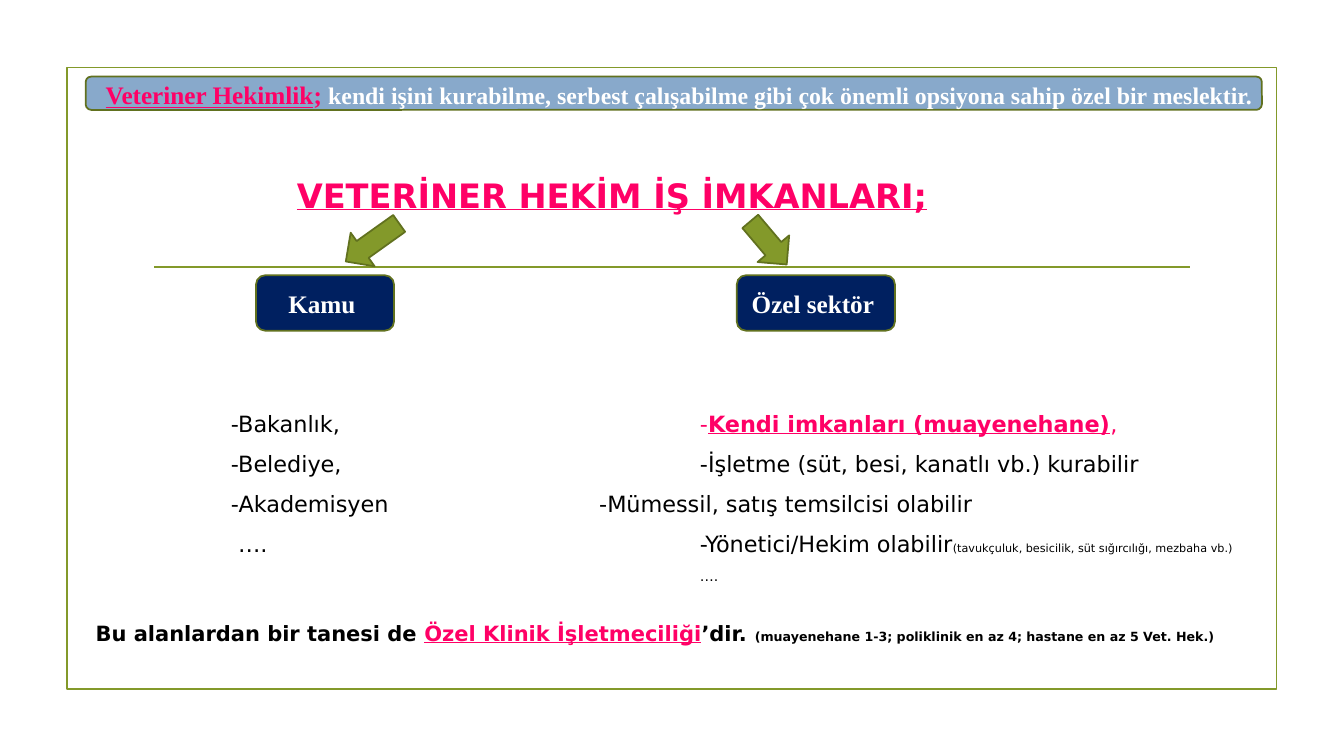
from lxml import etree
from pptx import Presentation
from pptx import util as u
from pptx.dml.color import RGBColor
from pptx.enum import shapes, text
from pptx.oxml.ns import qn

Pt = u.Pt
SHAPE = shapes.MSO_SHAPE
COLORS = {"green": "83992A", "olive": "61711F", "navy": "002060",
          "blue": "88A9CB", "pink": "FF0066", "white": "FFFFFF",
          "black": "000000"}
SANS, SERIF = "DejaVu Sans", "Times New Roman"


def rgb(name):
    return RGBColor.from_string(COLORS[name])


def run(words, **form):
    """Pair a piece of text with its format: size, color, bold, under, face."""
    return words, form


class Deck:
    def __init__(self):
        self.file = Presentation()
        self.file.slide_width, self.file.slide_height = Pt(960), Pt(540)
        self.slide = self.file.slides.add_slide(self.file.slide_layouts[6])

    def shape(self, kind, box, fill=None, line="olive", turn=0):
        item = self.slide.shapes.add_shape(kind, *map(Pt, box))
        item.shadow.inherit = False
        item.rotation = turn
        if fill:
            item.fill.solid()
            item.fill.fore_color.rgb = rgb(fill)
        else:
            item.fill.background()
        item.line.color.rgb = rgb(line)
        item.line.width = Pt(1.25)
        return item

    def rule(self, left, right, top):
        line = self.slide.shapes.add_connector(
            shapes.MSO_CONNECTOR.STRAIGHT, *map(Pt, (left, top, right, top)))
        line.line.color.rgb = rgb("green")
        line.line.width = Pt(1.25)
        etree.SubElement(line._element.spPr, qn("a:effectLst"))

    def para(self, par, runs, space=None, indent=0, align=None, **base):
        """Fill a paragraph; each run's format overrides the base format."""
        if indent:
            par._p.get_or_add_pPr().set("marL", str(Pt(indent)))
        par.alignment = align
        if space:
            par.line_spacing = space
        for words, form in runs:
            form = {"size": 16, "color": "black", "bold": False,
                    "under": False, "face": SANS, **base, **form}
            part = par.add_run()
            part.text = words
            font = part.font
            font.name, font.size = form["face"], Pt(form["size"])
            font.bold, font.underline = form["bold"], form["under"]
            font.color.rgb = rgb(form["color"])

    def text(self, box, rows, inset=0, space=None, **base):
        """Add a text box; each row is a list of runs and its options."""
        frame = self.slide.shapes.add_textbox(*map(Pt, box)).text_frame
        frame.word_wrap = True
        frame.margin_left = frame.margin_right = Pt(inset)
        frame.margin_top = frame.margin_bottom = Pt(inset / 2)
        for i, (runs, opts) in enumerate(rows):
            par = frame.add_paragraph() if i else frame.paragraphs[0]
            self.para(par, runs, **{"space": space, **base, **opts})

    def label(self, box, words):
        item = self.shape(SHAPE.ROUNDED_RECTANGLE, box, "navy")
        frame = item.text_frame
        frame.vertical_anchor = text.MSO_ANCHOR.MIDDLE
        self.para(frame.paragraphs[0], [run(words)], size=18, face=SERIF,
                  color="white", bold=True, align=text.PP_ALIGN.CENTER)


def main():
    deck = Deck()
    deck.shape(SHAPE.RECTANGLE, (47.8, 48.2, 864, 444.2), line="green")
    deck.rule(110.2, 850.3, 190.8)

    deck.text((212, 124.6, 500, 28),
              [([run("VETERİNER HEKİM İŞ İMKANLARI;")], {})],
              size=24, color="pink", bold=True, under=True)

    for box, turn in (((251.3, 149.8, 29.5, 46.8), 54.5),
                      ((534.2, 153.4, 29.5, 40.3), 319.8)):
        deck.shape(SHAPE.DOWN_ARROW, box, "green", turn=turn)
    deck.label((182.9, 196.6, 98.6, 39.6), "Kamu ")
    deck.label((526.3, 196.6, 113, 39.6), "Özel sektör ")

    step = Pt(28.8)
    public = ("-Bakanlık,", "-Belediye,", "-Akademisyen", " ….")
    deck.text((165, 283, 200, 116),
              [([run(words)], {}) for words in public], space=step)
    inner = {"indent": 72}
    private = [
        ([run("-", color="pink"),
          run("Kendi imkanları (muayenehane)", color="pink", bold=True,
              under=True),
          run(",", color="pink")], inner),
        ([run("-İşletme (süt, besi, kanatlı vb.) kurabilir")], inner),
        ([run("-Mümessil, satış temsilcisi olabilir")], {}),
        ([run("-Yönetici/Hekim olabilir"),
          run("(tavukçuluk, besicilik, süt sığırcılığı, mezbaha vb.)",
              size=8)], inner),
        ([run("….", size=10)], {"indent": 72, "space": Pt(19.3)})]
    deck.text((428, 283, 472, 136), private, space=step)

    deck.shape(SHAPE.ROUNDED_RECTANGLE, (61.2, 54.7, 840.2, 23.8), "blue")
    deck.text((68.4, 53.3, 840.2, 28.8), [([
        run("Veteriner Hekimlik", color="pink", size=18, under=True),
        run("; ", color="pink", size=18),
        run("kendi işini kurabilme, serbest çalışabilme gibi çok önemli "
            "opsiyona sahip özel bir meslektir.")], {})],
        inset=7.2, size=17, face=SERIF, color="white", bold=True)

    deck.text((61.2, 429.1, 838.1, 36), [([
        run("Bu alanlardan bir tanesi de "),
        run("Özel Klinik İşletmeciliği", color="pink", under=True),
        run("’dir."),
        run(" ", size=16),
        run("(muayenehane 1-3; poliklinik en az 4; hastane en az 5 "
            "Vet. Hek.)", size=9)], {})],
        inset=7.2, space=1.5, size=15, bold=True,
        align=text.PP_ALIGN.JUSTIFY)

    deck.file.save("out.pptx")


if __name__ == "__main__":
    main()
